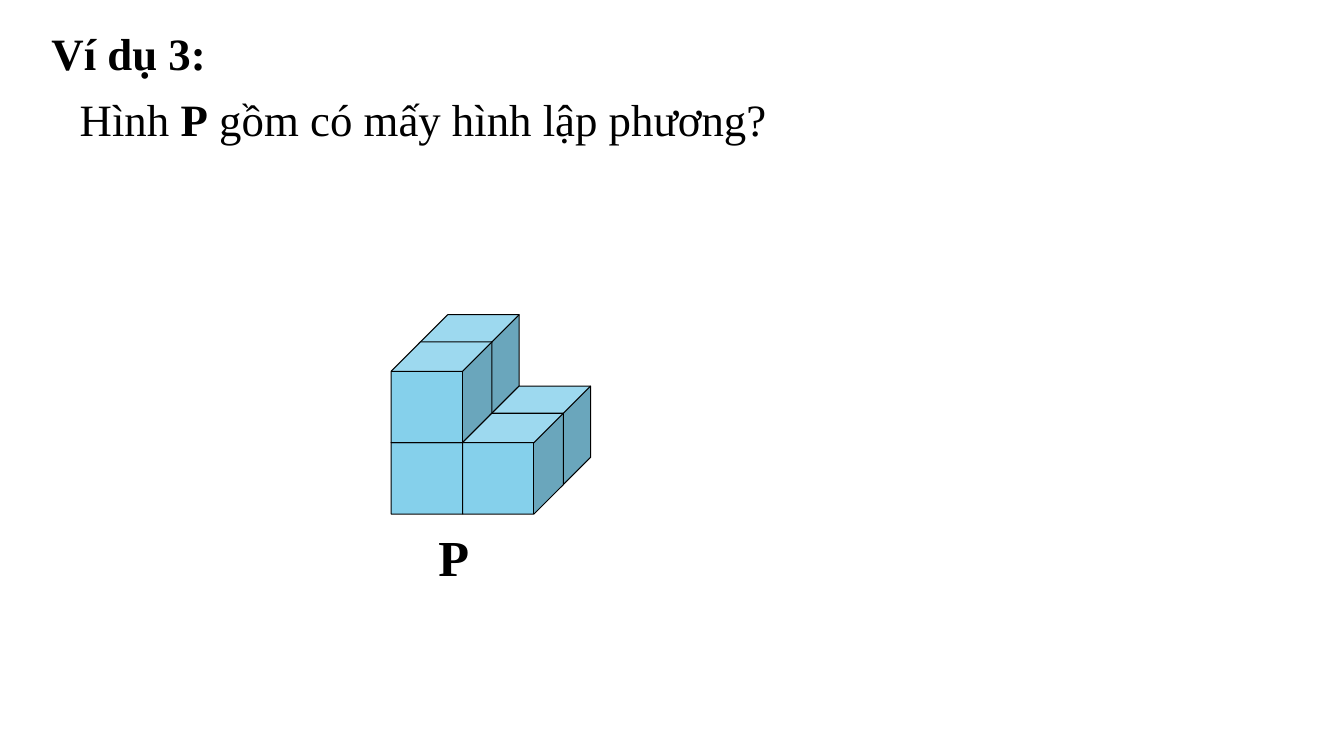
from dataclasses import dataclass
from itertools import product

from lxml import etree
from pptx import Presentation
from pptx.dml.color import RGBColor
from pptx.enum import shapes, text
from pptx.oxml import ns
from pptx.util import Inches, Pt


@dataclass(frozen=True)
class Theme:
    font: str = "Times New Roman"
    ink: RGBColor = RGBColor(0, 0, 0)
    cube: RGBColor = RGBColor(0x85, 0xD0, 0xEB)
    body_size: int = 32
    label_size: int = 36
    line: float = 0.75


THEME = Theme()


def write(shape, box, runs, size):
    """Place a text shape and fill its one paragraph with (text, bold) runs."""
    shape.left, shape.top, shape.width, shape.height = map(Inches, box)
    tf = shape.text_frame
    tf.word_wrap = True
    tf.auto_size = text.MSO_AUTO_SIZE.NONE
    tf.vertical_anchor = text.MSO_ANCHOR.TOP
    p = tf.paragraphs[0]
    p.alignment = text.PP_ALIGN.LEFT
    p.space_before = Pt(0)
    pPr = p._p.get_or_add_pPr()
    pPr.set("marL", "0")
    pPr.set("indent", "0")
    etree.SubElement(pPr, ns.qn("a:buNone"))
    for words, bold in runs:
        r = p.add_run()
        r.text = words
        r.font.name = THEME.font
        r.font.size = Pt(size)
        r.font.bold = bold
        r.font.color.rgb = THEME.ink


def add_question(s, left, top, width):
    title, body = s.placeholders
    height = 0.64
    write(title, (left, top, width, height), [("Ví dụ 3:", True)],
          THEME.body_size)
    write(body, (left + 0.28, top + 0.65, width, height),
          [("Hình ", False), ("P", True),
           (" gồm có mấy hình lập phương?", False)], THEME.body_size)


def add_cube(s, left, top, side, slant):
    sp = s.shapes.add_shape(shapes.MSO_SHAPE.CUBE, Inches(left), Inches(top),
                            Inches(side), Inches(side))
    sp.adjustments[0] = slant
    sp.shadow.inherit = False
    sp.fill.solid()
    sp.fill.fore_color.rgb = THEME.cube
    sp.line.color.rgb = THEME.ink
    sp.line.width = Pt(THEME.line)


def add_solid(s, left, bottom):
    """Stack the cubes of solid P, drawn from back to front, and label it."""
    side, slant, depth = 1, 0.292, 0.27
    face = side * (1 - slant)
    stacks = [(0, 0), (0, 1), (1, 0)]  # (column, level)
    for (column, level), row in product(stacks, (1, 0)):
        add_cube(s, left + column * face + row * depth,
                 bottom - side - level * face - row * depth, side, slant)
    label = s.shapes.add_textbox(0, 0, 0, 0)
    write(label, (left + 0.37, bottom + 0.07, 0.58, 0.7), [("P", True)],
          THEME.label_size)


def main():
    prs = Presentation()
    prs.slide_width, prs.slide_height = Inches(13.33), Inches(7.5)
    s = prs.slides.add_slide(prs.slide_layouts[1])
    add_question(s, 0.41, 0.21, 10.25)
    add_solid(s, 3.88, 5.1)
    prs.save("out.pptx")


if __name__ == "__main__":
    main()
